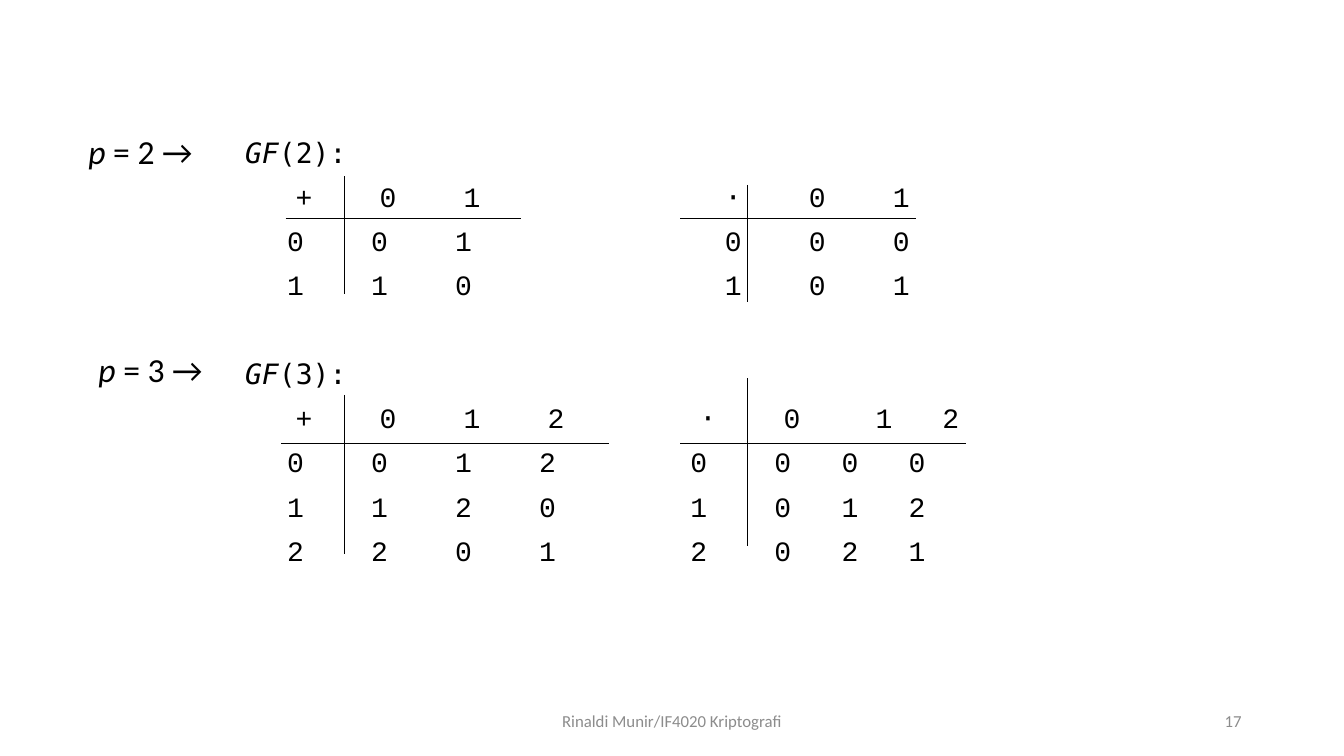
"""Build a slide with the addition and multiplication tables of GF(2) and GF(3)."""
import pptx
import pptx.util
import pptx.dml.color
import pptx.enum.shapes
import pptx.enum.text
import pptx.oxml
import pptx.oxml.ns
from lxml import etree

Pt = pptx.util.Pt
ALIGN = pptx.enum.text.PP_ALIGN
ANCHOR = pptx.enum.text.MSO_ANCHOR

COLOURS = {"ink": "000000", "footer": "8C8C8C"}
FONTS = {"label": "Calibri", "heading": "DejaVu Sans Mono", "digits": "Courier New"}

FIELDS = [
    {
        "order": 2,
        "label_at": (56, 90),
        "space_before": 10,
        "header": ["+", "0", "1", "⋅", "0", "1"],
        "rows": ["001000", "110101"],
        "header_tabs": [36, 96, 156, 342.6, 402.6, 462.6],
        "row_tabs": [30, 90, 150, 342.6, 402.6, 462.6],
    },
    {
        "order": 3,
        "label_at": (63.2, 245.5),
        "space_before": 41.5,
        "header": ["+", "0", "1", "2", "⋅", "0", "1", "2"],
        "rows": ["00120000", "11201012", "22012021"],
        "header_tabs": [36, 96, 156, 216, 324.6, 384.6, 450.4, 498],
        "row_tabs": [30, 90, 150, 210, 318, 378, 426, 474],
    },
]

RULES = [
    {"y": 156, "left": 204, "right": 372, "x": 246, "top": 126, "bottom": 210},
    {"y": 156, "left": 486, "right": 654, "x": 534, "top": 132, "bottom": 216},
    {"y": 316.8, "left": 201, "right": 435, "x": 246, "top": 282, "bottom": 396},
    {"y": 316.8, "left": 486, "right": 690, "x": 534, "top": 270, "bottom": 390},
]

FOOTERS = [
    ("Rinaldi Munir/IF4020 Kriptografi", 318, 324, ALIGN.CENTER),
    ("17", 678, 216, ALIGN.RIGHT),
]


def add_box(s, left, top, width, height, wrap=True):
    tf = s.shapes.add_textbox(Pt(left), Pt(top), Pt(width), Pt(height)).text_frame
    tf.word_wrap = wrap
    return tf


def add_run(p, text, font, size, colour="ink", italic=False):
    r = p.add_run()
    r.text = text
    r.font.name = FONTS[font]
    r.font.size = Pt(size)
    r.font.italic = italic
    r.font.color.rgb = pptx.dml.color.RGBColor.from_string(COLOURS[colour])


def add_line(s, x1, y1, x2, y2):
    line = s.shapes.add_connector(
        pptx.enum.shapes.MSO_CONNECTOR.STRAIGHT, Pt(x1), Pt(y1), Pt(x2), Pt(y2))
    line.line.width = Pt(0.75)
    line.line.color.rgb = pptx.dml.color.RGBColor.from_string(COLOURS["ink"])
    etree.SubElement(line._element.spPr, pptx.oxml.ns.qn("a:effectLst"))


def add_paragraph(tf, space_before):
    p = tf.add_paragraph() if tf.paragraphs[0].runs else tf.paragraphs[0]
    p.line_spacing = 0.9
    p.space_before = Pt(space_before)
    return p


def add_row(tf, cells, tabs):
    p = add_paragraph(tf, 10)
    tab_list = etree.SubElement(p._p.get_or_add_pPr(), pptx.oxml.ns.qn("a:tabLst"))
    for position in tabs:
        etree.SubElement(tab_list, pptx.oxml.ns.qn("a:tab"),
                         pos=str(int(Pt(position))), algn="l")
    add_run(p, "".join("\t" + cell for cell in cells), "digits", 20)


def main():
    prs = pptx.Presentation()
    prs.slide_width, prs.slide_height = Pt(960), Pt(540)
    s = prs.slides.add_slide(prs.slide_layouts[6])

    for text, left, width, align in FOOTERS:
        tf = add_box(s, left, 500.5, width, 28.75)
        tf.vertical_anchor = ANCHOR.MIDDLE
        p = tf.paragraphs[0]
        p.alignment = align
        add_run(p, text, "label", 12, "footer")

    tables = add_box(s, 168, 95.75, 680, 394.5)
    for field in FIELDS:
        p = add_paragraph(tables, field["space_before"])
        add_run(p, "GF", "heading", 20, italic=True)
        add_run(p, f"({field['order']}):", "heading", 20)
        add_row(tables, field["header"], field["header_tabs"])
        for row in field["rows"]:
            add_row(tables, row, field["row_tabs"])

    for rule in RULES:
        add_line(s, rule["left"], rule["y"], rule["right"], rule["y"])
        add_line(s, rule["x"], rule["top"], rule["x"], rule["bottom"])

    for field in FIELDS:
        p = add_box(s, *field["label_at"], 97.2, 36, wrap=False).paragraphs[0]
        add_run(p, "p", "label", 24, italic=True)
        add_run(p, f" = {field['order']} →", "label", 24)

    prs.save("out.pptx")


if __name__ == "__main__":
    main()
